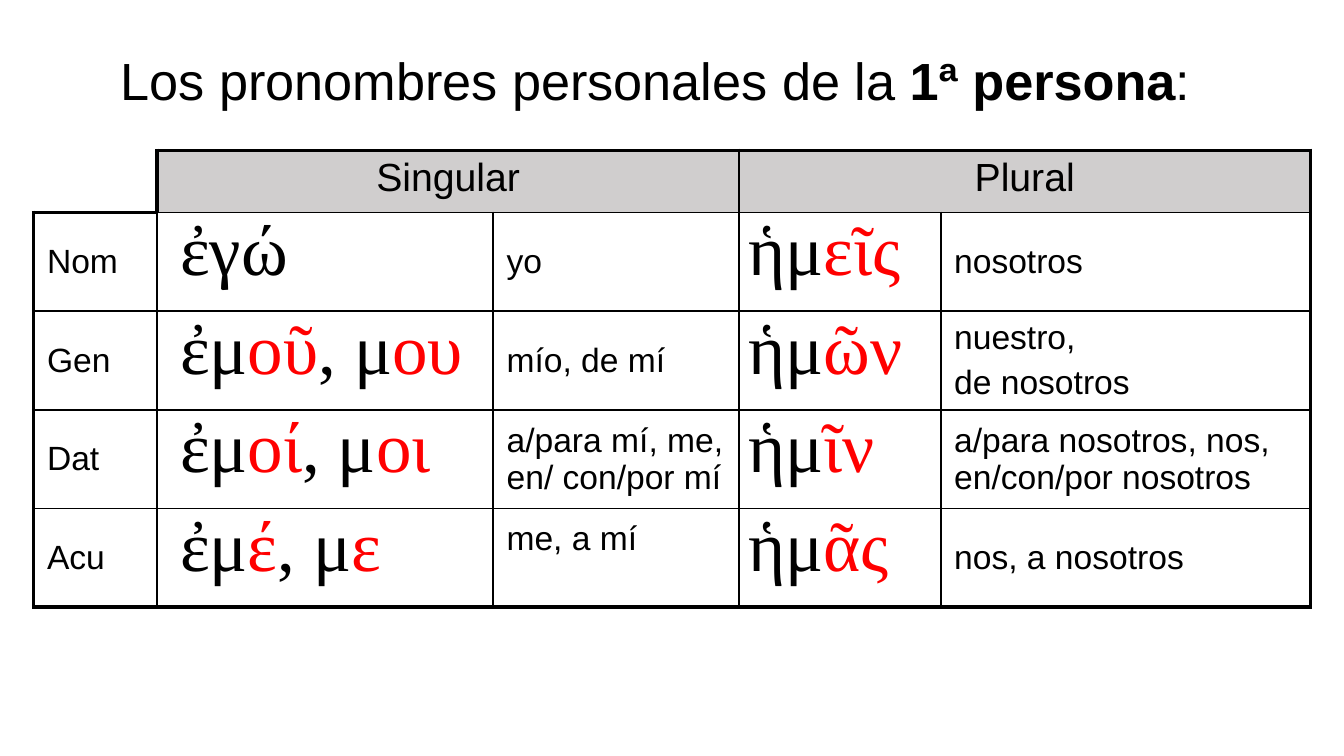
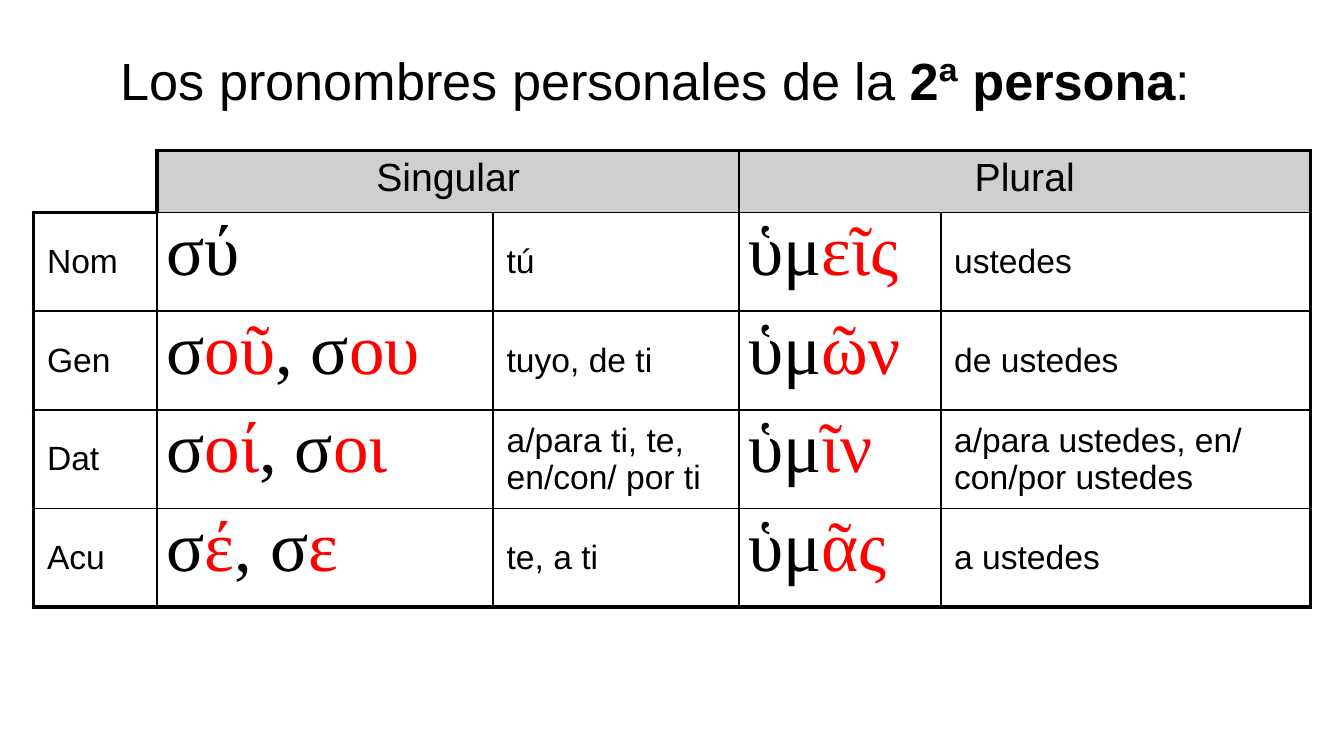
from lxml.etree import SubElement
from pptx import Presentation
from pptx.dml.color import RGBColor
from pptx.enum.text import MSO_ANCHOR, MSO_AUTO_SIZE, PP_ALIGN
from pptx.oxml.ns import qn
from pptx.util import Inches, Pt

BLACK = RGBColor(0x00, 0x00, 0x00)
RED = RGBColor(0xFF, 0x00, 0x00)
GREY = RGBColor(0xD0, 0xCE, 0xCE)
SANS, SERIF = "Arial", "Times New Roman"
THIN, THICK = 1, 2.25

TITLE_BOX = (0.5, 0.31, 8.75, 0.57)
TABLE_BOX = (0.25, 1.12, 9.5, 3.4)
COLUMN_WIDTHS = (0.92, 2.5, 1.83, 1.5, 2.75)
HEADING_HEIGHT = 0.46
HEADINGS = {1: "Singular", 3: "Plural"}
CASES = ("Nom", "Gen", "Dat", "Acu")

# Greek forms alternate stem | ending; a new line starts a new paragraph
FIRST_PERSON = (
    ("ἐγώ", "yo", "ἡμ|εῖς", "nosotros"),
    ("ἐμ|οῦ|, μ|ου", "mío, de mí", "ἡμ|ῶν", "nuestro,\nde nosotros"),
    ("ἐμ|οί|, μ|οι", "a/para mí, me, en/ con/por mí",
     "ἡμ|ῖν", "a/para nosotros, nos, en/con/por nosotros"),
    ("ἐμ|έ|, μ|ε", "me, a mí", "ἡμ|ᾶς", "nos, a nosotros"),
)
SECOND_PERSON = (
    ("σύ", "tú", "ὑμ|εῖς", "ustedes"),
    ("σ|οῦ|, σ|ου", "tuyo, de ti", "ὑμ|ῶν", "de ustedes"),
    ("σ|οί|, σ|οι", "a/para ti, te, en/con/ por ti",
     "ὑμ|ῖν", "a/para ustedes, en/ con/por ustedes"),
    ("σ|έ|, σ|ε", "te, a ti", "ὑμ|ᾶς", "a ustedes"),
)


def add_span(para, text, size=18, font=SANS, color=BLACK, bold=False):
    span = para.add_run()
    span.text = text
    span.font.size = Pt(size)
    span.font.name = font
    span.font.color.rgb = color
    span.font.bold = bold


def add_title(page, box, person):
    title = page.shapes.title
    title.left, title.top, title.width, title.height = map(Inches, box)
    frame = title.text_frame
    frame.word_wrap = True
    frame.auto_size = MSO_AUTO_SIZE.NONE
    frame.vertical_anchor = MSO_ANCHOR.MIDDLE
    para = frame.paragraphs[0]
    para.alignment = PP_ALIGN.CENTER
    add_span(para, "Los pronombres personales de la ", size=28)
    add_span(para, f"{person} persona", size=28, bold=True)
    add_span(para, ":", size=28)


def set_borders(cell, **widths):
    """Draw the sides L, R, T and B; a width of 0 hides the side."""
    properties = cell._tc.get_or_add_tcPr()
    for side, width in widths.items():
        line = SubElement(properties, qn(f"a:ln{side}"), w=str(int(Pt(width))))
        if width:
            fill = SubElement(line, qn("a:solidFill"))
            SubElement(fill, qn("a:srgbClr"), val=str(BLACK))
        else:
            SubElement(line, qn("a:noFill"))


def set_margins(cell, side, end):
    cell.margin_left = cell.margin_right = Inches(side)
    cell.margin_top = cell.margin_bottom = Inches(end)


def frame_cell(cell, row, column):
    """Thick outer frame that steps around the empty corner."""
    corner = row == column == 0
    last = column + 1 if cell.is_merge_origin else column
    widths = {
        "L": THICK if column == 0 or (row, column) == (0, 1) else THIN,
        "R": THICK if corner or last == len(COLUMN_WIDTHS) - 1 else THIN,
        "T": THICK if row == 0 or (row, column) == (1, 0) else THIN,
        "B": THICK if corner or row == len(CASES) else THIN,
    }
    if corner:
        widths.update(L=0, T=0)
    if cell.is_spanned:
        del widths["L"]
    set_borders(cell, **widths)
    if row == 0 and not corner:
        cell.fill.solid()
        cell.fill.fore_color.rgb = GREY
    else:
        cell.fill.background()


def fill_heading(cell, text):
    set_margins(cell, 0.1, 0.04)
    para = cell.text_frame.paragraphs[0]
    para.alignment = PP_ALIGN.CENTER
    add_span(para, text, size=21)


def fill_spanish(cell, text):
    set_margins(cell, 0.1, 0.04)
    cell.vertical_anchor = MSO_ANCHOR.MIDDLE
    for index, line in enumerate(text.split("\n")):
        para = cell.text_frame.paragraphs[0]
        if index:
            para = cell.text_frame.add_paragraph()
            para.space_before = Pt(3.6)
        add_span(para, line)


def fill_greek(cell, text, indent=0):
    set_margins(cell, 0.07, 0)
    para = cell.text_frame.paragraphs[0]
    if indent:
        para._p.get_or_add_pPr().set("indent", str(Inches(indent)))
    for index, part in enumerate(text.split("|")):
        add_span(para, part, size=38, font=SERIF, color=RED if index % 2 else BLACK)


def add_pronoun_table(page, box, forms, indent):
    row_count = len(CASES) + 1
    table = page.shapes.add_table(
        row_count, len(COLUMN_WIDTHS), *map(Inches, box)).table
    table.first_row = table.horz_banding = False
    for column, width in zip(table.columns, COLUMN_WIDTHS):
        column.width = Inches(width)
    # The case rows share the height that the heading leaves
    case_height = (box[3] - HEADING_HEIGHT) / len(CASES)
    for index, row in enumerate(table.rows):
        row.height = Inches(case_height if index else HEADING_HEIGHT)

    # Number headings, each over a Greek and a Spanish column
    for column, heading in HEADINGS.items():
        table.cell(0, column).merge(table.cell(0, column + 1))
        fill_heading(table.cell(0, column), heading)

    for row in range(row_count):
        for column in range(len(COLUMN_WIDTHS)):
            frame_cell(table.cell(row, column), row, column)

    # One row for each case
    for row, (case, texts) in enumerate(zip(CASES, forms), start=1):
        fill_spanish(table.cell(row, 0), case)
        for column, text in enumerate(texts, start=1):
            cell = table.cell(row, column)
            if column in HEADINGS:
                fill_greek(cell, text, indent if column == 1 else 0)
            else:
                fill_spanish(cell, text)
    return table


def add_pronoun_page(deck, person, forms, indent=0):
    page = deck.slides.add_slide(deck.slide_layouts[5])
    add_title(page, TITLE_BOX, person)
    return add_pronoun_table(page, TABLE_BOX, forms, indent)


def main():
    deck = Presentation()
    # Widescreen, 16 to 9
    deck.slide_width = Inches(10)
    deck.slide_height = deck.slide_width * 9 // 16
    first = add_pronoun_page(deck, "1ª", FIRST_PERSON, indent=0.1)
    # The accusative "me, a mí" sits above the middle of its row
    first.cell(4, 2).margin_bottom = Inches(0.32)
    add_pronoun_page(deck, "2ª", SECOND_PERSON)
    deck.save("out.pptx")


if __name__ == "__main__":
    main()
